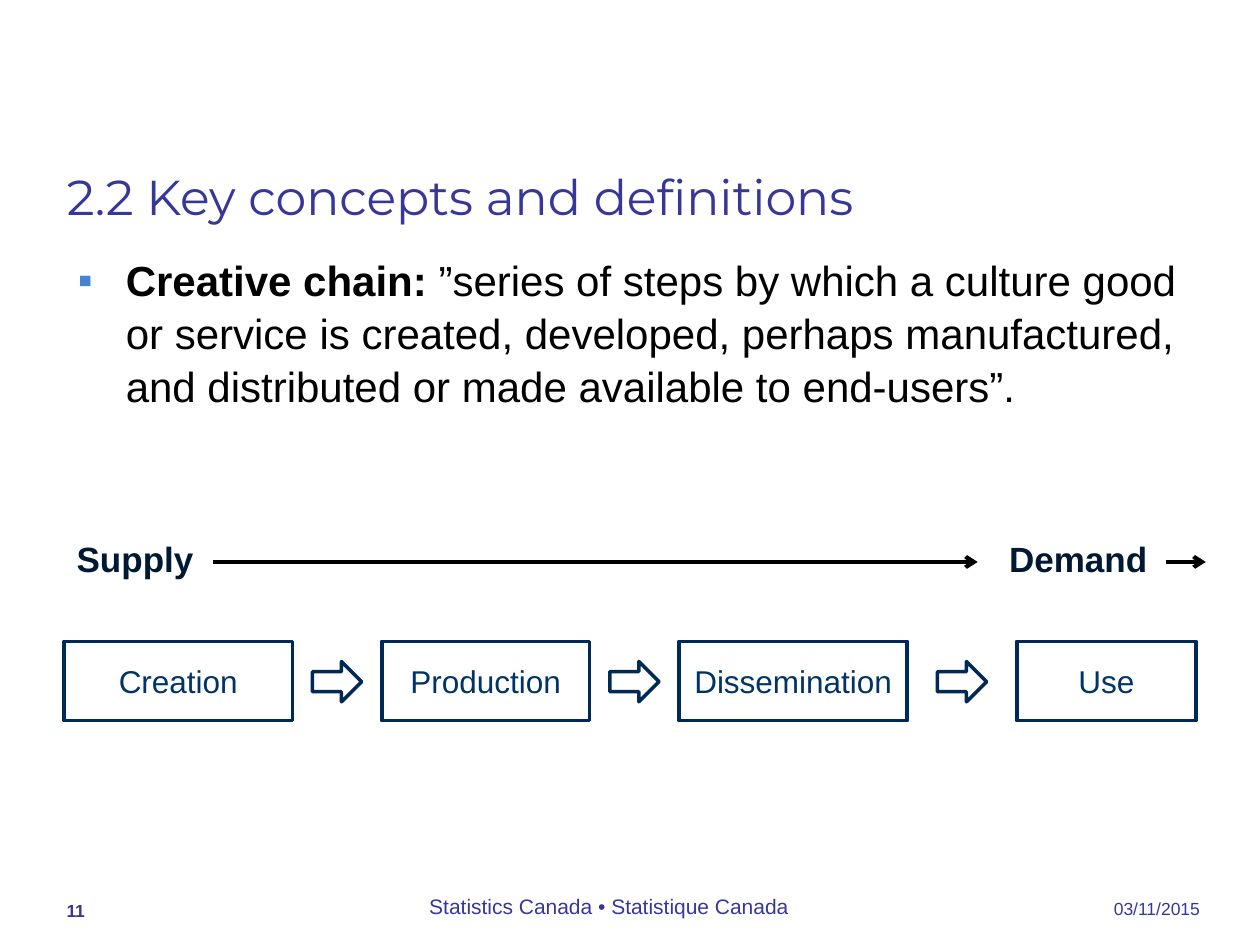
from itertools import pairwise

from lxml.etree import SubElement
from pptx import Presentation
from pptx.dml.color import RGBColor
from pptx.enum.shapes import MSO_CONNECTOR, MSO_SHAPE
from pptx.enum.text import MSO_ANCHOR, MSO_AUTO_SIZE, PP_ALIGN
from pptx.oxml.ns import qn
from pptx.util import Inches, Pt

INDIGO = RGBColor(0x37, 0x37, 0x99)
BULLET_BLUE = RGBColor(0x46, 0x82, 0xD6)
NAVY = RGBColor(0x00, 0x2A, 0x56)
STEP_BLUE = RGBColor(0x00, 0x33, 0x66)
LABEL_NAVY = RGBColor(0x00, 0x19, 0x33)
BLACK = RGBColor(0x00, 0x00, 0x00)
WHITE = RGBColor(0xFF, 0xFF, 0xFF)


class SlideBuilder:
    font_name = "Arial"
    title_font = "Montserrat"

    def __init__(self, slide):
        self.slide = slide

    def add_run(self, paragraph, text, size, color, bold=False, font_name=None):
        run = paragraph.add_run()
        run.text = text
        run.font.name = font_name or self.font_name
        run.font.size = Pt(size)
        run.font.bold = bold
        run.font.color.rgb = color

    def title(self, text, left, top, width, height):
        shape = self.slide.shapes.title
        shape.left, shape.top = Inches(left), Inches(top)
        shape.width, shape.height = Inches(width), Inches(height)
        frame = shape.text_frame
        frame.auto_size = MSO_AUTO_SIZE.NONE
        frame.vertical_anchor = MSO_ANCHOR.BOTTOM
        paragraph = frame.paragraphs[0]
        paragraph.alignment = PP_ALIGN.LEFT
        self.add_run(paragraph, text, 28, INDIGO, font_name=self.title_font)

    def text(self, runs, left, top, width, height, size, color,
             align=PP_ALIGN.LEFT, anchor=MSO_ANCHOR.TOP, wrap=True):
        shape = self.slide.shapes.add_textbox(
            Inches(left), Inches(top), Inches(width), Inches(height))
        frame = shape.text_frame
        frame.word_wrap = wrap
        frame.vertical_anchor = anchor
        paragraph = frame.paragraphs[0]
        paragraph.alignment = align
        for text, bold in runs:
            self.add_run(paragraph, text, size, color, bold)
        return paragraph

    def bullet(self, paragraph, character, indent):
        properties = paragraph._p.get_or_add_pPr()
        properties.set("marL", str(Inches(indent)))
        properties.set("indent", str(-Inches(indent)))
        bullet_color = SubElement(properties, qn("a:buClr"))
        SubElement(bullet_color, qn("a:srgbClr"), val=str(BULLET_BLUE))
        SubElement(properties, qn("a:buFont"), typeface=self.font_name)
        SubElement(properties, qn("a:buChar"), char=character)

    def shape(self, kind, left, top, width, height, text=None):
        shape = self.slide.shapes.add_shape(
            kind, Inches(left), Inches(top), Inches(width), Inches(height))
        shape.shadow.inherit = False
        shape.fill.solid()
        shape.fill.fore_color.rgb = WHITE
        shape.line.color.rgb = NAVY
        shape.line.width = Pt(2)
        if text:
            frame = shape.text_frame
            frame.vertical_anchor = MSO_ANCHOR.MIDDLE
            paragraph = frame.paragraphs[0]
            paragraph.alignment = PP_ALIGN.CENTER
            self.add_run(paragraph, text, 18, STEP_BLUE)

    def arrow(self, start, end, y):
        connector = self.slide.shapes.add_connector(
            MSO_CONNECTOR.STRAIGHT, Inches(start), Inches(y), Inches(end), Inches(y))
        connector.line.color.rgb = BLACK
        connector.line.width = Pt(2.25)
        SubElement(connector.line._get_or_add_ln(), qn("a:tailEnd"), type="arrow")
        SubElement(connector._element.spPr, qn("a:effectLst"))


def main():
    presentation = Presentation()
    presentation.slide_width = Inches(10)
    presentation.slide_height = Inches(7.5)
    builder = SlideBuilder(presentation.slides.add_slide(presentation.slide_layouts[5]))

    builder.title("2.2 Key concepts and definitions", 0.43, 1.07, 9.14, 0.77)

    definition = builder.text(
        [("Creative chain:", True),
         (" ”series of steps by which a culture good or service is created, developed, "
          "perhaps manufactured, and distributed or made available to end-users”.", False)],
        0.52, 1.95, 9.05, 4, 24, BLACK)
    builder.bullet(definition, "▪", 0.38)
    definition.line_spacing = 1.05

    footers = [
        ("03/11/2015", False, 8.47, 6.82, 1.15, 0.52, 10, PP_ALIGN.RIGHT),
        ("Statistics Canada • Statistique Canada", False,
         1.53, 6.82, 6.61, 0.52, 12, PP_ALIGN.CENTER),
        ("11", True, 0.43, 6.83, 0.64, 0.53, 10, PP_ALIGN.LEFT),
    ]
    for text, bold, left, top, width, height, size, align in footers:
        builder.text([(text, bold)], left, top, width, height, size, INDIGO,
                     align, MSO_ANCHOR.BOTTOM)

    sides = [("Supply", 0.51, 1.14, 1.69, 7.76), ("Demand", 7.91, 1.31, 9.25, 9.57)]
    for label, left, width, start, end in sides:
        builder.arrow(start, end, 4.46)
        builder.text([(label, True)], left, 4.22, width, 0.44, 20, LABEL_NAVY, wrap=False)

    steps = [("Creation", 0.51, 1.81), ("Production", 3.03, 1.65),
             ("Dissemination", 5.39, 1.81), ("Use", 8.07, 1.42)]
    for name, left, width in steps:
        builder.shape(MSO_SHAPE.FLOWCHART_PROCESS, left, 5.09, width, 0.63, name)

    arrow_width = 0.39
    for (_, left, width), (_, next_left, _) in pairwise(steps):
        arrow_left = (left + width + next_left - arrow_width) / 2
        builder.shape(MSO_SHAPE.RIGHT_ARROW, arrow_left, 5.25, arrow_width, 0.32)

    presentation.save("out.pptx")


if __name__ == "__main__":
    main()
